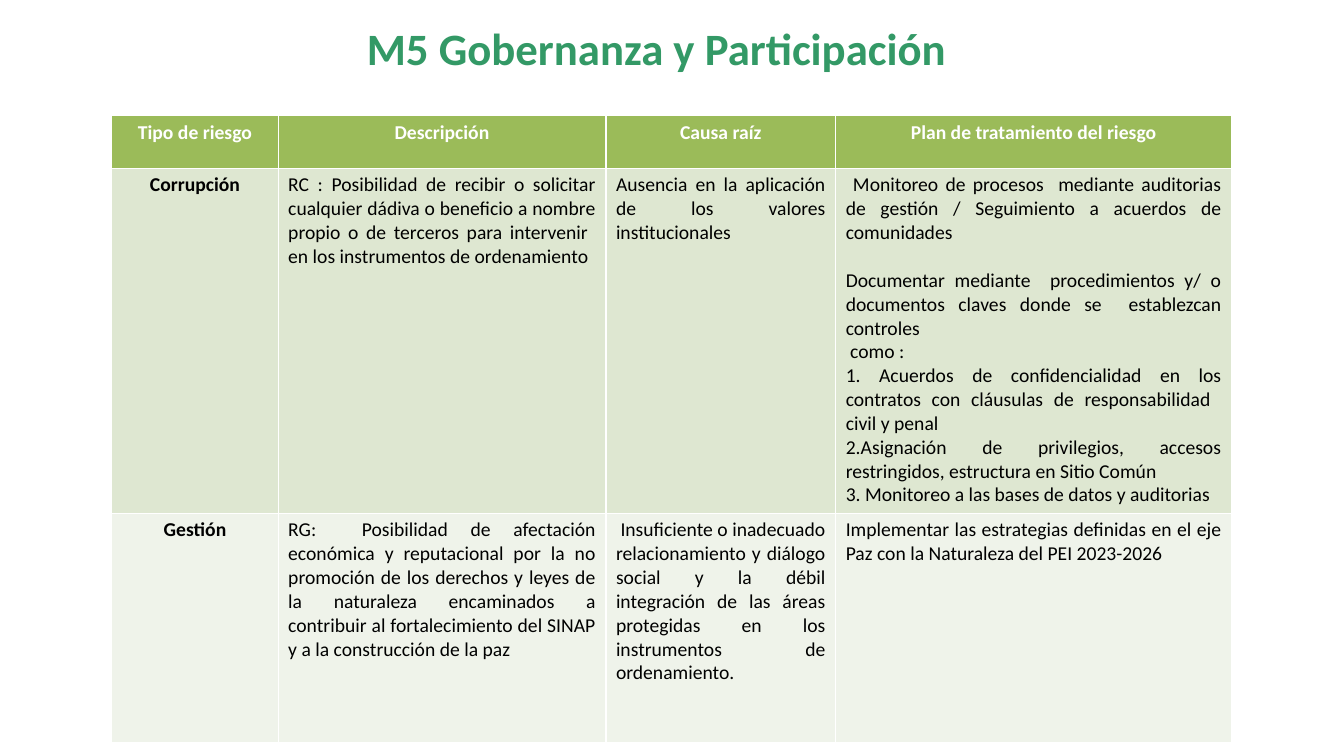
import pptx
import pptx.util
import pptx.dml.color
import pptx.enum.text

Cm = pptx.util.Cm
Pt = pptx.util.Pt
RGBColor = pptx.dml.color.RGBColor
PP_ALIGN = pptx.enum.text.PP_ALIGN

TITLE_GREEN = RGBColor(0x33, 0x99, 0x66)
HEADER_GREEN = RGBColor(0x9B, 0xBB, 0x59)
BAND_GREENS = [RGBColor(0xDE, 0xE7, 0xD1), RGBColor(0xEF, 0xF3, 0xEA)]
WHITE = RGBColor(0xFF, 0xFF, 0xFF)
BLACK = RGBColor(0x00, 0x00, 0x00)
FONT = "Calibri"

COLUMN_WIDTHS = [4.19, 8.26, 5.79, 9.98]
ROW_HEIGHTS = [1.32, 8.69, 5.79]
TREATMENT_BREAK = "Documentar mediante"

RISK_ROWS = [
    [
        ["Tipo de riesgo"],
        ["Descripción"],
        ["Causa raíz"],
        ["Plan de tratamiento del riesgo"],
    ],
    [
        ["Corrupción"],
        ["RC : Posibilidad de recibir o solicitar cualquier dádiva o beneficio a "
         "nombre propio o de terceros para intervenir  en los instrumentos de "
         "ordenamiento"],
        ["Ausencia en la aplicación de los valores institucionales"],
        [
            " Monitoreo de procesos  mediante auditorias de gestión / Seguimiento "
            "a acuerdos de comunidades",
            "Documentar mediante  procedimientos y/ o documentos claves donde se  "
            "establezcan controles",
            " como :",
            "1. Acuerdos de confidencialidad en los contratos con cláusulas de "
            "responsabilidad  civil y penal",
            "2.Asignación de privilegios, accesos restringidos, estructura en "
            "Sitio Común",
            "3. Monitoreo a las bases de datos y auditorias",
        ],
    ],
    [
        ["Gestión"],
        ["RG:  Posibilidad de afectación económica y reputacional por la no "
         "promoción de los derechos y leyes de la naturaleza encaminados a "
         "contribuir al fortalecimiento del SINAP y a la construcción de la paz"],
        [" Insuficiente o inadecuado relacionamiento y diálogo social y la débil "
         "integración de las áreas protegidas en los instrumentos de "
         "ordenamiento."],
        ["Implementar las estrategias definidas en el eje Paz con la Naturaleza "
         "del PEI 2023-2026"],
    ],
]


def add_span(para, text, size, color, bold):
    span = para.add_run()
    span.text = text
    span.font.name = FONT
    span.font.size = Pt(size)
    span.font.bold = bold
    span.font.color.rgb = color


def place_title(page, left, top, width, height):
    title = page.shapes.title
    title.left, title.top, title.width, title.height = left, top, width, height
    frame = title.text_frame
    frame.margin_left = frame.margin_right = 0
    frame.margin_top = frame.margin_bottom = 0
    frame.auto_size = pptx.enum.text.MSO_AUTO_SIZE.SHAPE_TO_FIT_TEXT
    para = frame.paragraphs[0]
    para.alignment = PP_ALIGN.CENTER
    add_span(para, "M5 Gobernanza y Participación", 32, TITLE_GREEN, True)


def fill_cell(cell, lines, background, color, emphasized):
    cell.fill.solid()
    cell.fill.fore_color.rgb = background
    frame = cell.text_frame
    for index, line in enumerate(lines):
        para = frame.add_paragraph() if index else frame.paragraphs[0]
        para.alignment = PP_ALIGN.CENTER if emphasized else PP_ALIGN.JUSTIFY
        if line.startswith(TREATMENT_BREAK):
            para.space_before = Pt(17)
        add_span(para, line, 14, color, emphasized)


def place_risk_table(page, left, top, width, height):
    table = page.shapes.add_table(
        len(RISK_ROWS), len(COLUMN_WIDTHS), left, top, width, height
    ).table
    for column, share in zip(table.columns, COLUMN_WIDTHS):
        column.width = int(width * share / sum(COLUMN_WIDTHS))
    for row, share in zip(table.rows, ROW_HEIGHTS):
        row.height = int(height * share / sum(ROW_HEIGHTS))
    for row_index, risk_row in enumerate(RISK_ROWS):
        is_header = row_index == 0
        background = HEADER_GREEN if is_header else BAND_GREENS[row_index - 1]
        color = WHITE if is_header else BLACK
        for column_index, lines in enumerate(risk_row):
            emphasized = is_header or column_index == 0
            cell = table.cell(row_index, column_index)
            fill_cell(cell, lines, background, color, emphasized)


def main():
    deck = pptx.Presentation()
    deck.slide_width = Cm(33.87)
    deck.slide_height = Cm(19.05)
    page = deck.slides.add_slide(deck.slide_layouts[5])
    place_title(page, Cm(4.55), Cm(0.51), Cm(24), Cm(1.37))
    place_risk_table(
        page, Cm(2.82), Cm(2.92), Cm(sum(COLUMN_WIDTHS)), Cm(sum(ROW_HEIGHTS))
    )
    deck.save("out.pptx")


if __name__ == "__main__":
    main()
